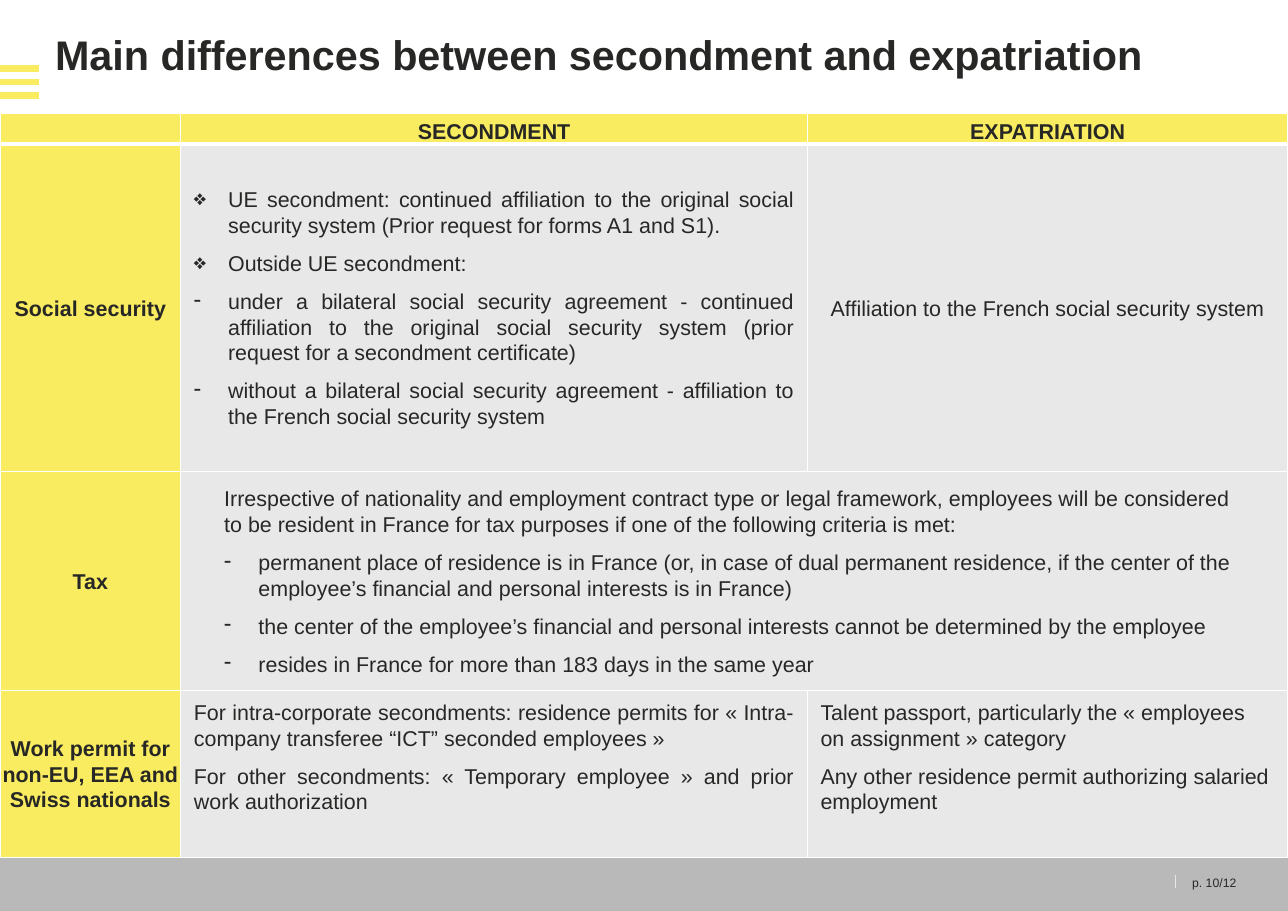
"""Builds a slide comparing secondment with expatriation."""
import pptx
import pptx.dml.color
import pptx.enum.shapes
import pptx.enum.text
import pptx.oxml
import pptx.oxml.ns
import pptx.util
from lxml import etree

Cm = pptx.util.Cm
Pt = pptx.util.Pt
ALIGN = pptx.enum.text.PP_ALIGN
ANCHOR = pptx.enum.text.MSO_ANCHOR
YELLOW, GREY, INK, WHITE = "F9EC60", "E8E8E8", "272726", "FFFFFF"
PAGE_WIDTH, PAGE_HEIGHT = 29.7, 21.0
COLUMNS = (4.17, 14.45, 11.08)
ROWS = (0.71, 7.54, 4.8, 3.84)
HANG = 0.79
NO_MARGIN, BODY_MARGIN, WIDE_MARGIN = (0, 0), (0.3, 0.2), (1, 0.2)


def color(code):
    """Return the colour for a hex string."""
    return pptx.dml.color.RGBColor.from_string(code)


def add_element(parent, tag, **attributes):
    """Append a DrawingML child element with the given attributes."""
    return etree.SubElement(parent, pptx.oxml.ns.qn(tag), attributes)


def write(frame, lines, size=14, bold=False, align=ALIGN.LEFT,
          spacing=1.07, after=8, bullets=""):
    """Write one paragraph per line, with a bullet where one is given."""
    for index, (line, bullet) in enumerate(zip(lines, bullets.ljust(len(lines)))):
        para = frame.paragraphs[0] if index == 0 else frame.add_paragraph()
        if bullet != " ":
            properties = para._p.get_or_add_pPr()
            properties.set("marL", str(Cm(HANG)))
            properties.set("indent", str(-Cm(HANG)))
            add_element(properties, "a:buChar", char=bullet)
        para.alignment = align
        para.line_spacing = spacing
        para.space_after = Pt(after)
        if not line:
            add_element(para._p, "a:endParaRPr", sz=str(size * 100))
            continue
        span = para.add_run()
        span.text = line
        span.font.name = "Arial"
        span.font.size = Pt(size)
        span.font.bold = bold
        span.font.color.rgb = color(INK)


def add_text(page, box, text, anchor=ANCHOR.TOP, **text_format):
    """Add a text box without margins at the given box in centimetres."""
    frame = page.shapes.add_textbox(*map(Cm, box)).text_frame
    frame.word_wrap = True
    frame.vertical_anchor = anchor
    frame.margin_left = frame.margin_right = 0
    frame.margin_top = frame.margin_bottom = 0
    write(frame, [text], spacing=text_format.pop("spacing", 1), after=0, **text_format)


def add_line(page, start, end, code, width):
    """Draw a straight line between two points in centimetres."""
    line = page.shapes.add_connector(
        pptx.enum.shapes.MSO_CONNECTOR.STRAIGHT, *map(Cm, start + end))
    line.line.color.rgb = color(code)
    line.line.width = Pt(width)
    add_element(line._element.spPr, "a:effectLst")


def add_heading(page, left, top, width):
    """Place the title and the three stripes at its left."""
    for index in range(3):
        y = top + 0.77 + 0.31 * index
        add_line(page, (left, y), (left + 0.89, y), YELLOW, 4.5)
    add_text(page, (left + 1.27, top, width - 2.57, 1.22),
             "Main differences between secondment and expatriation",
             size=27, bold=True, spacing=0.9)


def add_footer(page, left, top, width, height):
    """Place the grey band with the page number."""
    band = page.shapes.add_shape(
        pptx.enum.shapes.MSO_SHAPE.RECTANGLE, *map(Cm, (left, top, width, height)))
    band.shadow.inherit = False
    band.fill.solid()
    band.fill.fore_color.rgb = color("B9B9B9")
    band.line.fill.background()
    divider = left + width - 2.6
    add_line(page, (divider, top + 0.7), (divider, top + 1), "E6E6E6", 0.75)
    for x, text, align in ((0.05, "p. 10", ALIGN.RIGHT), (1.02, "/12", ALIGN.LEFT)):
        add_text(page, (divider + x, top + 0.52, 0.97, 0.71), text,
                 anchor=ANCHOR.MIDDLE, size=8, align=align)


def style_cell(cell, code, row, margin, anchor):
    """Set the borders, fill, margins and anchor of a table cell."""
    properties = cell._tc.get_or_add_tcPr()
    thick_side = {0: "B", 1: "T"}.get(row)
    for side in "LRTB":
        width = Pt(3 if side == thick_side else 1)
        border = add_element(properties, f"a:ln{side}", w=str(width))
        fill = add_element(border, "a:solidFill")
        add_element(fill, "a:srgbClr", val=WHITE)
    cell.fill.solid()
    cell.fill.fore_color.rgb = color(code)
    cell.margin_left = cell.margin_right = Cm(margin[0])
    cell.margin_top = cell.margin_bottom = Cm(margin[1])
    cell.vertical_anchor = anchor


def add_comparison(page, left, top):
    """Place the comparison table with its header row and label column."""
    table = page.shapes.add_table(
        len(ROWS), len(COLUMNS),
        *map(Cm, (left, top, sum(COLUMNS), sum(ROWS)))).table
    for column, width in zip(table.columns, COLUMNS):
        column.width = Cm(width)
    for row, height in zip(table.rows, ROWS):
        row.height = Cm(height)
    table.cell(2, 1).merge(table.cell(2, 2))

    for column, text in enumerate(("", "SECONDMENT", "EXPATRIATION")):
        cell = table.cell(0, column)
        style_cell(cell, YELLOW, 0, NO_MARGIN, ANCHOR.BOTTOM)
        write(cell.text_frame, [text], bold=True, align=ALIGN.CENTER)

    labels = ("Social security", "Tax", "Work permit for non-EU, EEA and Swiss nationals")
    for row, text in enumerate(labels, 1):
        cell = table.cell(row, 0)
        style_cell(cell, YELLOW, row, NO_MARGIN, ANCHOR.MIDDLE)
        write(cell.text_frame, [text], bold=True, align=ALIGN.CENTER)

    bodies = (
        (1, 1, BODY_MARGIN, ANCHOR.MIDDLE, ALIGN.JUSTIFY, "❖❖--", (
            "UE secondment: continued affiliation to the original social security system "
            "(Prior request for forms A1 and S1).",
            "Outside UE secondment:",
            "under a bilateral social security agreement - continued affiliation to the "
            "original social security system (prior request for a secondment certificate)",
            "without a bilateral social security agreement - affiliation to the French "
            "social security system")),
        (1, 2, BODY_MARGIN, ANCHOR.MIDDLE, ALIGN.CENTER, "", (
            "Affiliation to the French social security system",)),
        (2, 1, WIDE_MARGIN, ANCHOR.MIDDLE, ALIGN.LEFT, " ---", (
            "Irrespective of nationality and employment contract type or legal framework, "
            "employees will be considered to be resident in France for tax purposes if one "
            "of the following criteria is met:",
            "permanent place of residence is in France (or, in case of dual permanent "
            "residence, if the center of the employee’s financial and personal interests "
            "is in France)",
            "the center of the employee’s financial and personal interests cannot be "
            "determined by the employee",
            "resides in France for more than 183 days in the same year")),
        (3, 1, BODY_MARGIN, ANCHOR.TOP, ALIGN.JUSTIFY, "", (
            "For intra-corporate secondments: residence permits for « Intra-company "
            "transferee “ICT” seconded employees »",
            "For other secondments: « Temporary employee » and prior work authorization")),
        (3, 2, BODY_MARGIN, ANCHOR.TOP, ALIGN.LEFT, "", (
            "Talent passport, particularly the « employees on assignment » category",
            "Any other residence permit authorizing salaried employment")),
    )
    for row, column, margin, anchor, align, bullets, lines in bodies:
        cell = table.cell(row, column)
        style_cell(cell, GREY, row, margin, anchor)
        write(cell.text_frame, lines, align=align, bullets=bullets)


def main():
    """Build the deck and save it."""
    deck = pptx.Presentation()
    deck.slide_width, deck.slide_height = Cm(PAGE_WIDTH), Cm(PAGE_HEIGHT)
    page = deck.slides.add_slide(deck.slide_layouts[6])
    add_footer(page, 0, 19.47, PAGE_WIDTH, 1.53)
    add_heading(page, 0, 0.81, PAGE_WIDTH)
    add_comparison(page, 0, 2.62)
    deck.save("out.pptx")


if __name__ == "__main__":
    main()
